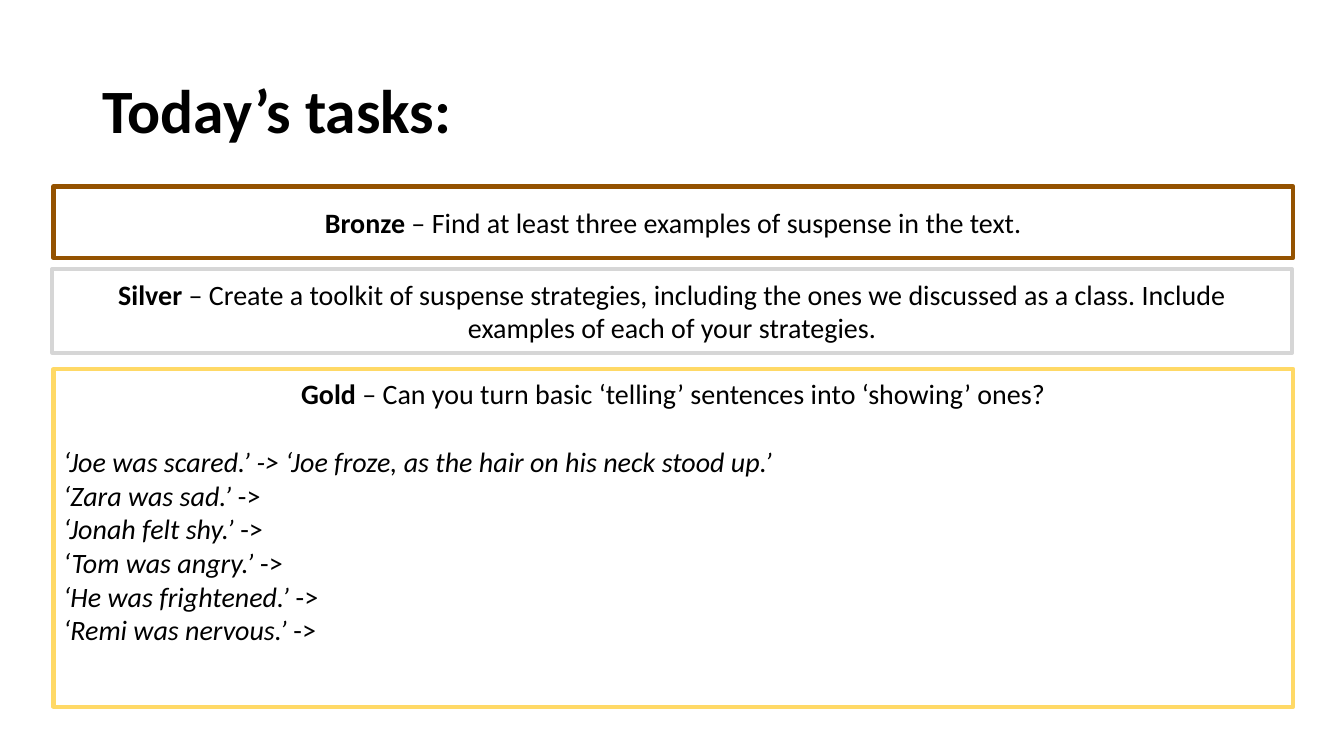
from pptx import Presentation
from pptx.dml.color import RGBColor
from pptx.enum.shapes import MSO_SHAPE
from pptx.enum.text import MSO_ANCHOR, MSO_AUTO_SIZE, PP_ALIGN
from pptx.util import Cm, Pt

RECTANGLE = MSO_SHAPE.RECTANGLE
MIDDLE, TOP = MSO_ANCHOR.MIDDLE, MSO_ANCHOR.TOP
LEFT, CENTER = PP_ALIGN.LEFT, PP_ALIGN.CENTER
NO_AUTOFIT = MSO_AUTO_SIZE.NONE
TITLE_ONLY = 5

COLOURS = {
    "text": "000000",
    "fill": "FFFFFF",
    "Bronze": "945200",
    "Silver": "D6D6D6",
    "Gold": "FFD966",
}
TITLE_FONT = {"name": "Calibri", "size": Pt(44), "bold": True, "italic": False}
BODY_FONT = {"name": "Calibri", "size": Pt(20), "bold": False, "italic": False}
TITLE_BOX = (2.33, 1.02, 29.21, 3.68)
TASKS = [
    ("Bronze", "Find at least three examples of suspense in the text.", (1.35, 4.7, 31.24, 1.8)),
    (
        "Silver",
        "Create a toolkit of suspense strategies, including the ones we discussed as a class. "
        "Include examples of each of your strategies.",
        (1.32, 6.78, 31.24, 2.11),
    ),
    ("Gold", "Can you turn basic ‘telling’ sentences into ‘showing’ ones?", (1.35, 9.3, 31.24, 8.51)),
]
SENTENCES = [
    ("‘Joe was scared.’ -> ‘Joe froze, as the hair on his neck stood up.’", ""),
    ("‘Zara was sad.’", " ->"),
    ("‘Jonah felt shy.’", " ->"),
    ("‘Tom was angry.’", " ->"),
    ("‘He was frightened.’", " ->"),
    ("‘Remi was nervous.’", " ->"),
]


def set_attributes(target, values):
    for name, value in values.items():
        setattr(target, name, value)


def add_run(paragraph, text, font_values):
    run = paragraph.add_run()
    run.text = text
    set_attributes(run.font, font_values)
    run.font.color.rgb = RGBColor.from_string(COLOURS["text"])


def place_title(slide, text, box):
    title = slide.shapes.title
    set_attributes(title, dict(zip(("left", "top", "width", "height"), map(Cm, box))))
    set_attributes(
        title.text_frame,
        {"vertical_anchor": MIDDLE, "auto_size": NO_AUTOFIT, "word_wrap": True},
    )
    paragraph = title.text_frame.paragraphs[0]
    set_attributes(paragraph, {"alignment": LEFT, "line_spacing": 0.9})
    add_run(paragraph, text, TITLE_FONT)


def add_task(slide, level, instruction, box):
    shape = slide.shapes.add_shape(RECTANGLE, *map(Cm, box))
    shape.shadow.inherit = False
    shape.fill.solid()
    shape.fill.fore_color.rgb = RGBColor.from_string(COLOURS["fill"])
    shape.line.color.rgb = RGBColor.from_string(COLOURS[level])
    shape.line.width = Pt(3)
    text_frame = shape.text_frame
    set_attributes(text_frame, {"word_wrap": True, "vertical_anchor": MIDDLE})
    paragraph = text_frame.paragraphs[0]
    paragraph.alignment = CENTER
    add_run(paragraph, level, {**BODY_FONT, "bold": True})
    add_run(paragraph, f" – {instruction}", BODY_FONT)
    return text_frame


def add_sentences(text_frame, sentences):
    set_attributes(text_frame, {"vertical_anchor": TOP, "margin_top": Cm(0.2)})
    for index, (sentence, arrow) in enumerate(sentences):
        paragraph = text_frame.add_paragraph()
        set_attributes(
            paragraph,
            {"alignment": LEFT, "space_before": Pt(0 if index else 24.4)},
        )
        add_run(paragraph, sentence, {**BODY_FONT, "italic": True})
        if arrow:
            add_run(paragraph, arrow, BODY_FONT)


def main():
    presentation = Presentation()
    presentation.slide_width = Cm(33.87)
    presentation.slide_height = Cm(19.05)
    slide = presentation.slides.add_slide(presentation.slide_layouts[TITLE_ONLY])
    place_title(slide, "Today’s tasks:", TITLE_BOX)
    frames = {level: add_task(slide, level, instruction, box) for level, instruction, box in TASKS}
    add_sentences(frames["Gold"], SENTENCES)
    presentation.save("out.pptx")


if __name__ == "__main__":
    main()
